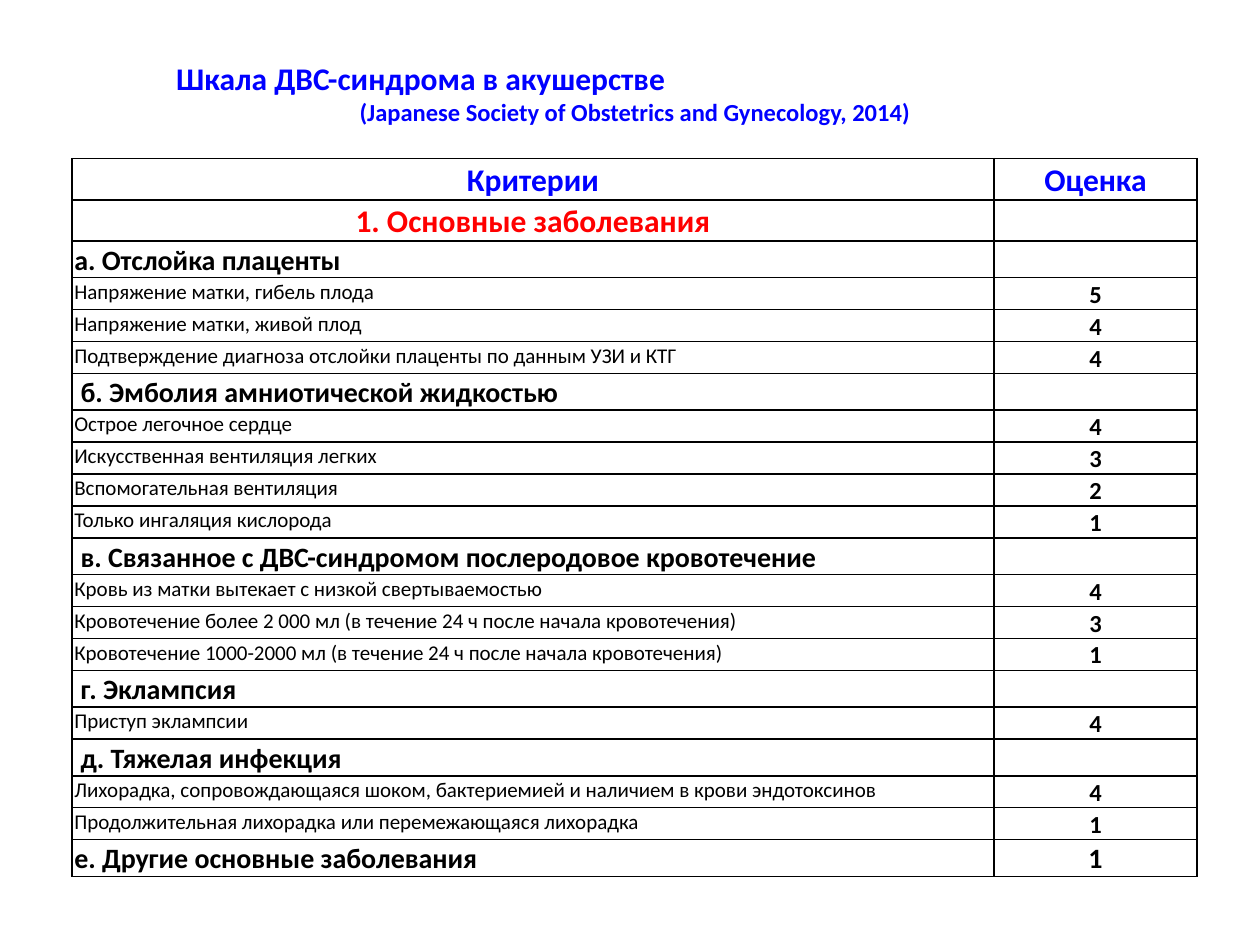
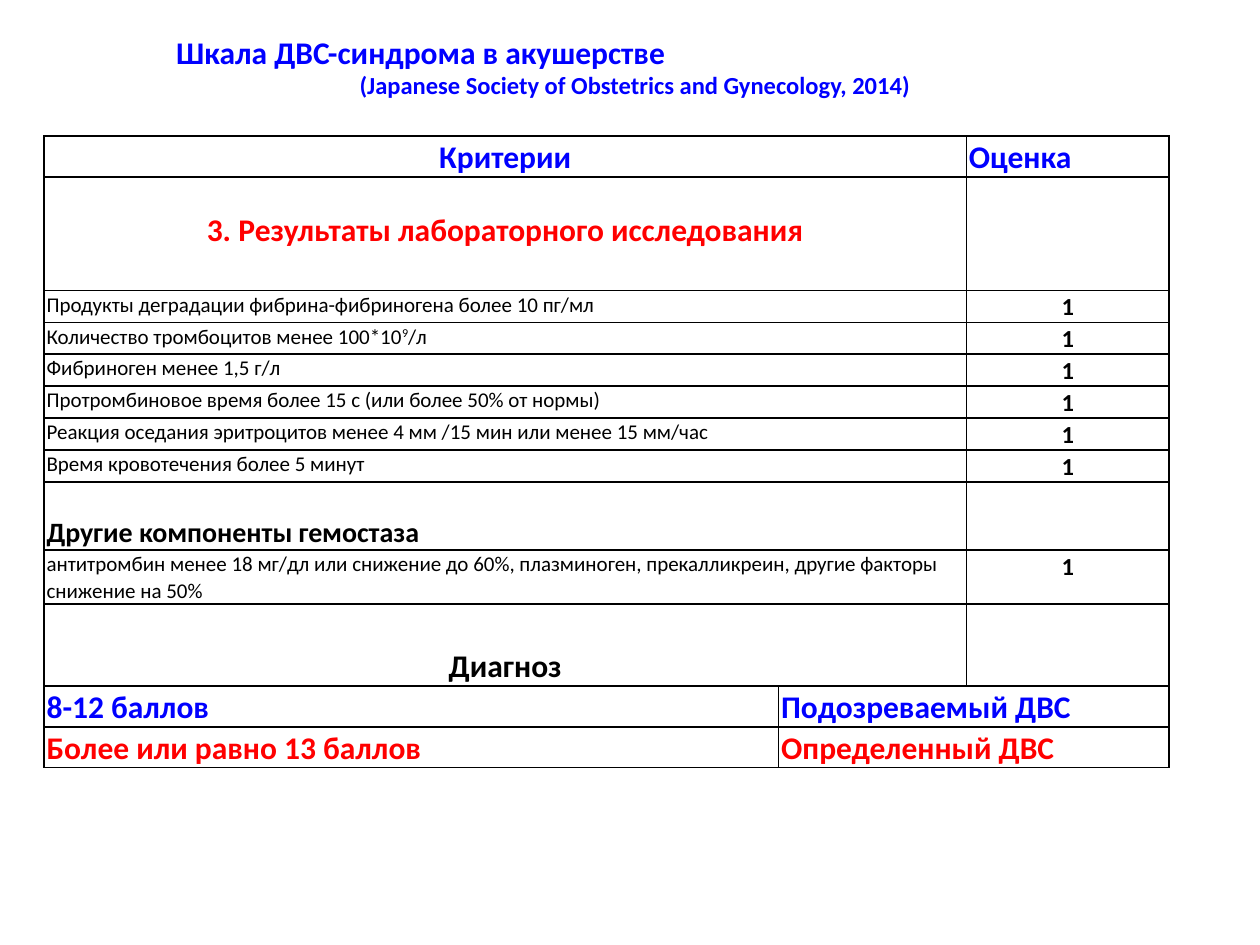
from lxml import etree
from pptx import Presentation
from pptx.dml.color import RGBColor
from pptx.enum.text import PP_ALIGN
from pptx.oxml.ns import qn
from pptx.util import Inches, Pt

LEFT, MID = PP_ALIGN.LEFT, PP_ALIGN.CENTER
BLUE, RED, BLACK = "0000FF", "FF0000", "000000"
FONT = "Calibri"
WIDE, HIGH = 10, 7.5
EDGES = ("a:lnL", "a:lnR", "a:lnT", "a:lnB")
TITLE = "Шкала ДВС-синдрома в акушерстве"
SOURCE = "(Japanese Society of Obstetrics and Gynecology, 2014)"
BIG, SUB, ITEM = 0.325, 0.29, 0.2535

STYLES = {
    "head": dict(high=BIG, size=18, color=BLUE, align=MID),
    "part": dict(high=BIG, size=18, color=RED, align=MID),
    "lab": dict(high=0.9, size=18, color=RED, align=MID, top=0.25),
    "sub": dict(high=SUB, size=16),
    "inset": dict(high=SUB, size=16, left=0.07),
    "other": dict(high=0.54, size=16, top=0.25),
    "item": dict(high=ITEM, size=12, bold=False),
    "pair": dict(high=0.43, size=12, bold=False),
    "result": dict(high=0.65, size=18, align=MID, top=0.325),
    "likely": dict(high=BIG, size=18, color=BLUE),
    "sure": dict(high=BIG, size=18, color=RED),
}

CAUSES = [
    ("head", "Критерии", "Оценка"),
    ("part", "1. Основные заболевания", ""),
    ("sub", "а. Отслойка плаценты", ""),
    ("item", "Напряжение матки, гибель плода", "5"),
    ("item", "Напряжение матки, живой плод", "4"),
    ("item", "Подтверждение диагноза отслойки плаценты по данным УЗИ и КТГ", "4"),
    ("inset", "б. Эмболия амниотической жидкостью", ""),
    ("item", "Острое легочное сердце", "4"),
    ("item", "Искусственная вентиляция легких", "3"),
    ("item", "Вспомогательная вентиляция", "2"),
    ("item", "Только ингаляция кислорода", "1"),
    ("inset", "в. Связанное с ДВС-синдромом послеродовое кровотечение", ""),
    ("item", "Кровь из матки вытекает с низкой свертываемостью", "4"),
    ("item", "Кровотечение более 2 000 мл (в течение 24 ч после начала кровотечения)", "3"),
    ("item", "Кровотечение 1000-2000 мл (в течение 24 ч после начала кровотечения)", "1"),
    ("inset", "г. Эклампсия", ""),
    ("item", "Приступ эклампсии", "4"),
    ("inset", "д. Тяжелая инфекция", ""),
    ("item", "Лихорадка, сопровождающаяся шоком, бактериемией и наличием в крови эндотоксинов", "4"),
    ("item", "Продолжительная лихорадка или перемежающаяся лихорадка", "1"),
    ("sub", "е. Другие основные заболевания", "1"),
]
LABS = [
    ("head", "Критерии", "Оценка"),
    ("lab", "3. Результаты лабораторного исследования", ""),
    ("item", "Продукты деградации фибрина-фибриногена более 10 пг/мл", "1"),
    ("item", "Количество тромбоцитов менее 100*10^9^/л", "1"),
    ("item", "Фибриноген менее 1,5 г/л", "1"),
    ("item", "Протромбиновое время более 15 с (или более 50% от нормы)", "1"),
    ("item", "Реакция оседания эритроцитов менее 4 мм /15 мин или менее 15 мм/час", "1"),
    ("item", "Время кровотечения более 5 минут", "1"),
    ("other", "Другие компоненты гемостаза", ""),
    ("pair", "антитромбин менее 18 мг/дл или снижение до 60%, плазминоген, прекалликреин, "
             "другие факторы снижение на 50%", "1"),
    ("result", "Диагноз", ""),
    ("likely", "8-12 баллов", "Подозреваемый ДВС"),
    ("sure", "Более или равно 13 баллов", "Определенный ДВС"),
]
PAGES = [
    dict(rows=CAUSES, left=0.57, top=1.26, head=0.42, cols=(7.32, 1.61), mark=MID),
    dict(rows=LABS, left=0.35, top=1.08, head=0.21, cols=(5.83, 1.49, 1.61), mark=LEFT),
]


def hue(code):
    return RGBColor.from_string(code)


def write(para, text, size=18, color=BLACK, bold=True, align=LEFT, space=None):
    para.alignment = align
    para.line_spacing = space
    for n, part in enumerate(text.split("^")):
        if not part:
            end = etree.SubElement(para._p, qn("a:endParaRPr"))
            end.set("sz", str(size * 100))
            continue
        run = para.add_run()
        run.text = part
        run.font.name = FONT
        run.font.size = Pt(size)
        run.font.bold = bold
        run.font.color.rgb = hue(color)
        if n % 2:
            run._r.get_or_add_rPr().set("baseline", "30000")


deck = Presentation()
deck.slide_width, deck.slide_height = Inches(WIDE), Inches(HIGH)

for page in PAGES:
    slide = deck.slides.add_slide(deck.slide_layouts[6])
    rows, cols = page["rows"], page["cols"]
    highs = [STYLES[kind]["high"] for kind, *_ in rows]
    frame = slide.shapes.add_table(
        len(rows), len(cols), Inches(page["left"]), Inches(page["top"]),
        Inches(sum(cols)), Inches(sum(highs)))
    table = frame.table
    table.first_row = table.horz_banding = False
    for col, wide in zip(table.columns, cols):
        col.width = Inches(wide)

    for r, (kind, text, score) in enumerate(rows):
        form = dict(STYLES[kind])
        table.rows[r].height = Inches(form.pop("high"))
        top, left = form.pop("top", 0), form.pop("left", 0.02)
        split = kind in ("likely", "sure")
        last = 1 if split else len(cols) - 1
        if split:
            table.cell(r, 1).merge(table.cell(r, 2))
        elif last > 1:
            table.cell(r, 0).merge(table.cell(r, 1))

        for cell in table.rows[r].cells:
            cell.margin_left = cell.margin_right = Inches(0.02)
            cell.margin_top = cell.margin_bottom = 0
            cell.fill.background()
            for n, edge in enumerate(EDGES):
                line = etree.Element(qn(edge), w=str(Pt(1)))
                solid = etree.SubElement(line, qn("a:solidFill"))
                etree.SubElement(solid, qn("a:srgbClr"), val=BLACK)
                cell._tc.get_or_add_tcPr().insert(n, line)

        label = table.cell(r, 0)
        label.margin_top, label.margin_left = Inches(top), Inches(left)
        write(label.text_frame.paragraphs[0], text, space=1.07, **form)

        if kind == "head":
            form["align"] = page["mark"]
        elif not split:
            form = dict(size=16 if kind == "sub" and score else 14, align=MID)
        write(table.cell(r, last).text_frame.paragraphs[0], score, space=1.07, **form)

    box = slide.shapes.add_textbox(
        Inches(0.13 * WIDE), Inches(page["head"]), Inches(0.748 * WIDE), Inches(0.88))
    box.text_frame.word_wrap = True
    write(box.text_frame.paragraphs[0], TITLE, color=BLUE)
    write(box.text_frame.add_paragraph(), SOURCE, size=14, color=BLUE, align=MID)

deck.save("out.pptx")
